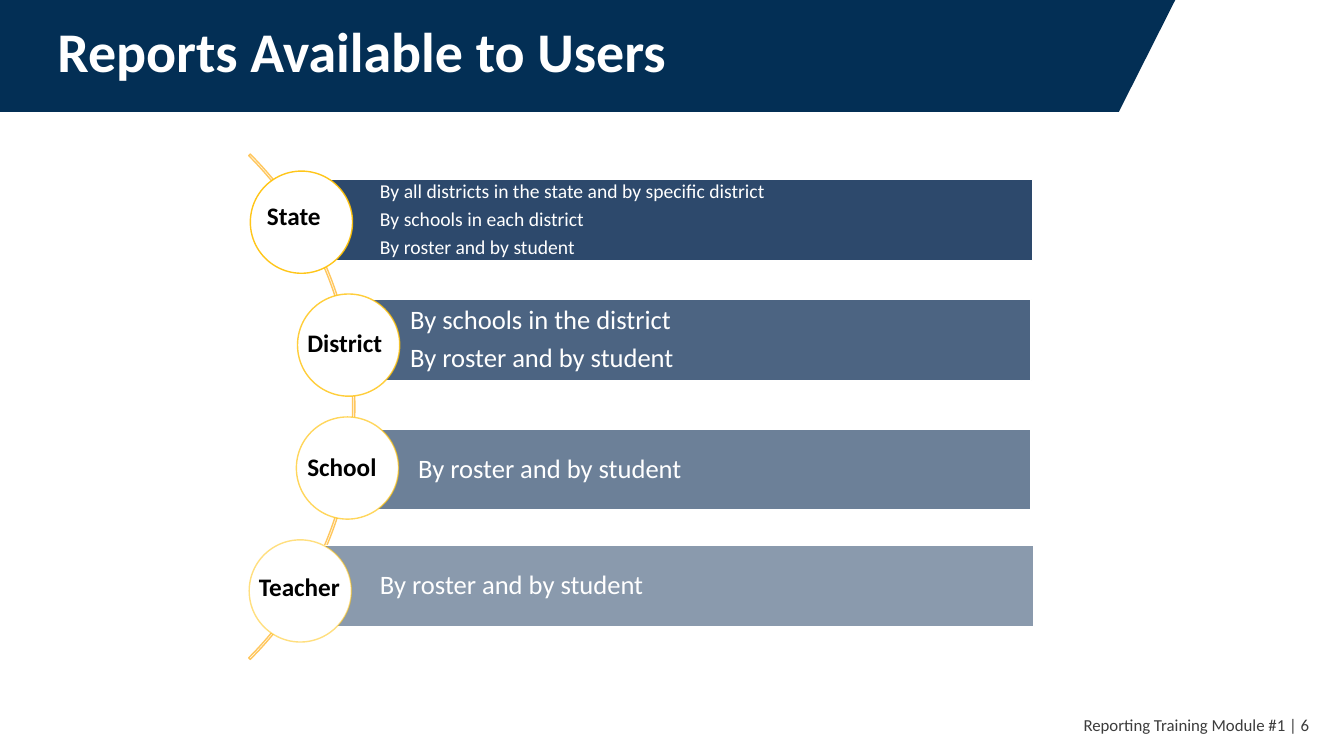
"""Build the slide that lists the reports available to each user level."""
from dataclasses import dataclass

from lxml import etree
from pptx import Presentation
from pptx.dml.color import RGBColor
from pptx.enum.shapes import MSO_SHAPE
from pptx.enum.text import MSO_ANCHOR, MSO_AUTO_SIZE, PP_ALIGN
from pptx.oxml.ns import qn
from pptx.util import Pt

ARC, BAR, CIRCLE = MSO_SHAPE.BLOCK_ARC, MSO_SHAPE.RECTANGLE, MSO_SHAPE.OVAL
TOP, MIDDLE = MSO_ANCHOR.TOP, MSO_ANCHOR.MIDDLE
LEFT, RIGHT = PP_ALIGN.LEFT, PP_ALIGN.RIGHT
NO_AUTOFIT = MSO_AUTO_SIZE.NONE


@dataclass(frozen=True)
class Theme:
    """Colours, font and type sizes of the slide."""
    font: str = "Calibri"
    banner: str = "032F55"
    bar: str = "17365D"
    ring: str = "FFC000"
    arc: str = "FFC75E"
    white: str = "FFFFFF"
    black: str = "000000"
    footer: str = "3C3C3C"
    title_size: int = 40
    label_size: int = 18
    report_size: int = 19
    dense_size: int = 14
    footer_size: int = 12


THEME = Theme()
TITLE = "Reports Available to Users"
FOOTER = "Reporting Training Module #1 | 6"
LEVELS = [
    dict(name="State", opacity=90, circle_left=178.8, bar=(225.4, 128.2, 511.9),
         label=(183.6, 139.7), indent=46, size=THEME.dense_size,
         reports=["By all districts in the state and by specific district",
                  "By schools in each district",
                  "By roster and by student"]),
    dict(name="District", opacity=77, circle_left=212.5, bar=(247, 214, 489.6),
         label=(212.4, 230.4), indent=46, size=THEME.report_size,
         reports=["By schools in the district", "By roster and by student"]),
    dict(name="School", opacity=63, circle_left=211.7, bar=(248.4, 306.4, 488),
         label=(212.4, 319), indent=50.3, size=THEME.report_size,
         reports=["By roster and by student"]),
    dict(name="Teacher", opacity=50, circle_left=178, bar=(225.4, 389.6, 513.2),
         label=(177.8, 404.6), indent=46, size=THEME.report_size,
         reports=["By roster and by student"]),
]
BANNER = [(0, 0), (839.5, 0), (799.2, 79.9), (0, 79.9)]
ARC_BOX = (-257, 35.3, 510.5, 510.5)
ARC_ADJUSTMENTS = (189, 27, 0.00308)
CIRCLE_TOP, CIRCLE_PITCH, CIRCLE_SIZE = 122.2, 87.8, 73
BAR_HEIGHT = 58
LABEL_SIZE = (84, 30)


def paint(color_format, color, opacity=100):
    """Set a colour and its opacity in percent."""
    color_format.rgb = RGBColor.from_string(color)
    if opacity < 100:
        srgb = color_format._xFill.find(qn("a:srgbClr"))
        etree.SubElement(srgb, qn("a:alpha")).set("val", str(opacity * 1000))


def add_figure(slide, preset, box, fill, line, fill_opacity=100, line_opacity=100):
    """Add a preset shape with a one-point outline."""
    figure = slide.shapes.add_shape(preset, *map(Pt, box))
    figure.shadow.inherit = False
    if fill:
        figure.fill.solid()
        paint(figure.fill.fore_color, fill, fill_opacity)
    else:
        figure.fill.background()
    figure.line.width = Pt(1)
    figure.line.fill.solid()
    paint(figure.line.fill.fore_color, line, line_opacity)
    return figure


def write(shape, lines, size, color, bold=False, align=LEFT, anchor=MIDDLE,
          line_spacing=1.0, space_after=0):
    """Fill a shape with evenly formatted paragraphs."""
    frame = shape.text_frame
    frame.text = "\n".join(lines)
    frame.word_wrap = True
    frame.auto_size = NO_AUTOFIT
    frame.vertical_anchor = anchor
    for paragraph in frame.paragraphs:
        paragraph.alignment = align
        paragraph.line_spacing = line_spacing
        paragraph.space_before = Pt(0)
        paragraph.space_after = Pt(space_after)
        paragraph.font.name = THEME.font
        paragraph.font.size = Pt(size)
        paragraph.font.bold = bold
        paragraph.font.color.rgb = RGBColor.from_string(color)


def add_text(slide, box, text, size, color, **style):
    """Add a text box with one line."""
    write(slide.shapes.add_textbox(*map(Pt, box)), [text], size, color, **style)


def add_header(slide):
    """Draw the banner behind the title."""
    start, *corners = BANNER
    builder = slide.shapes.build_freeform(*map(Pt, start))
    builder.add_line_segments([tuple(map(Pt, corner)) for corner in corners])
    banner = builder.convert_to_shape()
    banner.shadow.inherit = False
    banner.fill.solid()
    paint(banner.fill.fore_color, THEME.banner)
    banner.line.fill.background()
    title = slide.shapes.title
    banner._element.addnext(title._element)
    title.left, title.top, title.width, title.height = map(Pt, (33.8, 0, 828, 77.8))
    write(title, [TITLE], THEME.title_size, THEME.white, bold=True, line_spacing=0.9)


def add_level(slide, index, level):
    """Draw one user level: bar with reports, circle and label."""
    bar = add_figure(slide, BAR, (*level["bar"], BAR_HEIGHT), THEME.bar,
                     THEME.white, fill_opacity=level["opacity"])
    frame = bar.text_frame
    frame.margin_left = Pt(level["indent"])
    frame.margin_top = frame.margin_right = frame.margin_bottom = Pt(3.5)
    write(bar, level["reports"], level["size"], THEME.white,
          line_spacing=0.9, space_after=round(0.35 * level["size"], 1))
    circle_top = CIRCLE_TOP + index * CIRCLE_PITCH
    add_figure(slide, CIRCLE, (level["circle_left"], circle_top, CIRCLE_SIZE, CIRCLE_SIZE),
               THEME.white, THEME.ring, line_opacity=level["opacity"])
    add_text(slide, (*level["label"], *LABEL_SIZE), level["name"],
             THEME.label_size, THEME.black, bold=True, anchor=TOP)


def main():
    """Build and save the slide."""
    deck = Presentation()
    deck.slide_width, deck.slide_height = Pt(960), Pt(540)
    slide = deck.slides.add_slide(deck.slide_layouts[5])
    add_header(slide)
    add_text(slide, (726.5, 503.3, 216, 28.8), FOOTER,
             THEME.footer_size, THEME.footer, align=RIGHT)
    arc = add_figure(slide, ARC, ARC_BOX, None, THEME.arc)
    for position, adjustment in enumerate(ARC_ADJUSTMENTS):
        arc.adjustments[position] = adjustment
    for index, level in enumerate(LEVELS):
        add_level(slide, index, level)
    deck.save("out.pptx")


if __name__ == "__main__":
    main()
